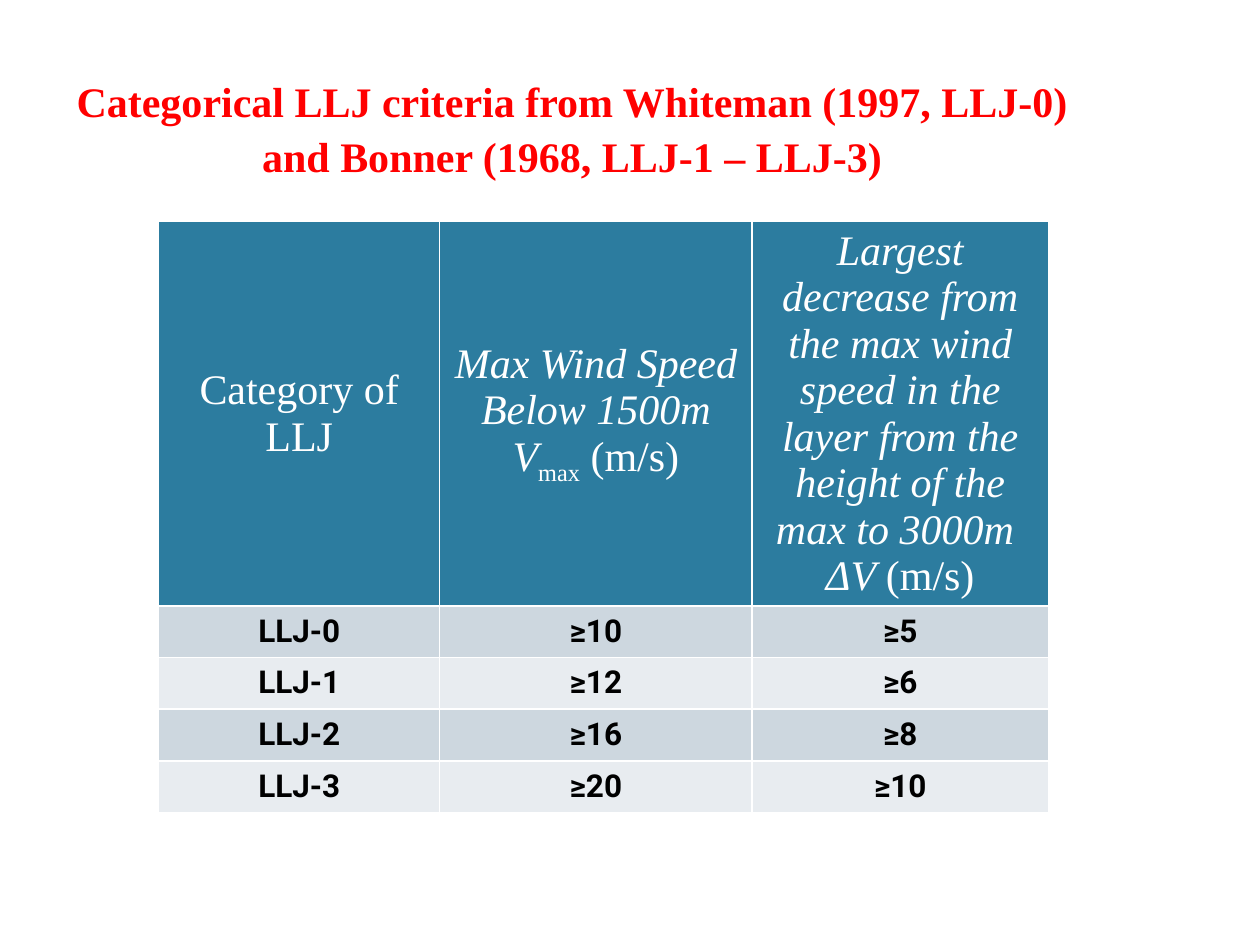
from pptx import Presentation
from pptx.dml.color import RGBColor
from pptx.enum.text import MSO_ANCHOR, MSO_AUTO_SIZE, PP_ALIGN
from pptx.util import Inches, Pt

CENTER = PP_ALIGN.CENTER
TOP, MIDDLE = MSO_ANCHOR.TOP, MSO_ANCHOR.MIDDLE
NO_AUTOSIZE = MSO_AUTO_SIZE.NONE

THEME = {
    "title": {"name": "Times New Roman", "size": Pt(24), "bold": True, "color": "FF0000"},
    "header": {"name": "Times New Roman", "size": Pt(24), "bold": False, "color": "FFFFFF"},
    "body": {"name": "Roboto", "size": Pt(18), "bold": True, "color": "000000"},
    "header_fill": "2C7C9F",
    "band_fills": ["CDD7DF", "E8ECF0"],
}


def add_run(p, text, style, italic=False):
    r = p.add_run()
    r.text = text
    for key, value in THEME[style].items():
        if key == "color":
            r.font.color.rgb = RGBColor.from_string(value)
        else:
            setattr(r.font, key, value)
    r.font.italic = italic
    return r


def fill_cell(cell, paragraphs, style, fill):
    """Write paragraphs of (text, italic, baseline) runs into a filled cell."""
    cell.fill.solid()
    cell.fill.fore_color.rgb = RGBColor.from_string(fill)
    cell.vertical_anchor = MIDDLE
    tf = cell.text_frame
    for i, runs in enumerate(paragraphs):
        p = tf.add_paragraph() if i else tf.paragraphs[0]
        p.alignment = CENTER
        for text, italic, baseline in runs:
            r = add_run(p, text, style, italic)
            if baseline:
                r.font._element.set("baseline", str(baseline))


prs = Presentation()
prs.slide_width, prs.slide_height = Inches(10), Inches(7.5)
s = prs.slides.add_slide(prs.slide_layouts[5])

# Title
title = s.shapes.title
title.left, title.top = Inches(0.47), Inches(0.51)
title.width, title.height = Inches(8.14), Inches(0.91)
tf = title.text_frame
for key, value in {"word_wrap": False, "auto_size": NO_AUTOSIZE, "vertical_anchor": TOP}.items():
    setattr(tf, key, value)
lines = ["Categorical LLJ criteria from Whiteman (1997, LLJ-0) ",
         "and Bonner (1968, LLJ-1 – LLJ-3)"]
for i, line in enumerate(lines):
    p = tf.add_paragraph() if i else tf.paragraphs[0]
    p.alignment = CENTER
    p.line_spacing = 1.1
    add_run(p, line, "title")

# Table frame; the default table style supplies the white rules
headers = [
    [[("Category of LLJ", False, 0)]],
    [[("Max Wind Speed Below 1500m", True, 0)],
     [("V", True, 0), ("max", False, -25000), (" (m/s)", False, 0)]],
    [[("Largest decrease from the max wind speed in the layer "
       "from the height of the max to 3000m ", True, 0)],
     [("ΔV ", True, 0), ("(m/s)", False, 0)]],
]
criteria = [("LLJ-0", 10, 5), ("LLJ-1", 12, 6), ("LLJ-2", 16, 8), ("LLJ-3", 20, 10)]
col_widths = [2.23, 2.48, 2.35]
row_heights = [3.03] + [0.41] * len(criteria)

table = s.shapes.add_table(len(row_heights), len(col_widths), Inches(1.26), Inches(1.76),
                           Inches(sum(col_widths)), Inches(sum(row_heights))).table
for col, width in zip(table.columns, col_widths):
    col.width = Inches(width)
for row, height in zip(table.rows, row_heights):
    row.height = Inches(height)

# Header row
for c, paragraphs in enumerate(headers):
    fill_cell(table.cell(0, c), paragraphs, "header", THEME["header_fill"])

# Category rows in alternating bands
for i, (category, speed, decrease) in enumerate(criteria):
    for c, text in enumerate([category, f"≥{speed}", f"≥{decrease}"]):
        fill_cell(table.cell(i + 1, c), [[(text, False, 0)]], "body",
                  THEME["band_fills"][i % 2])

prs.save("out.pptx")
